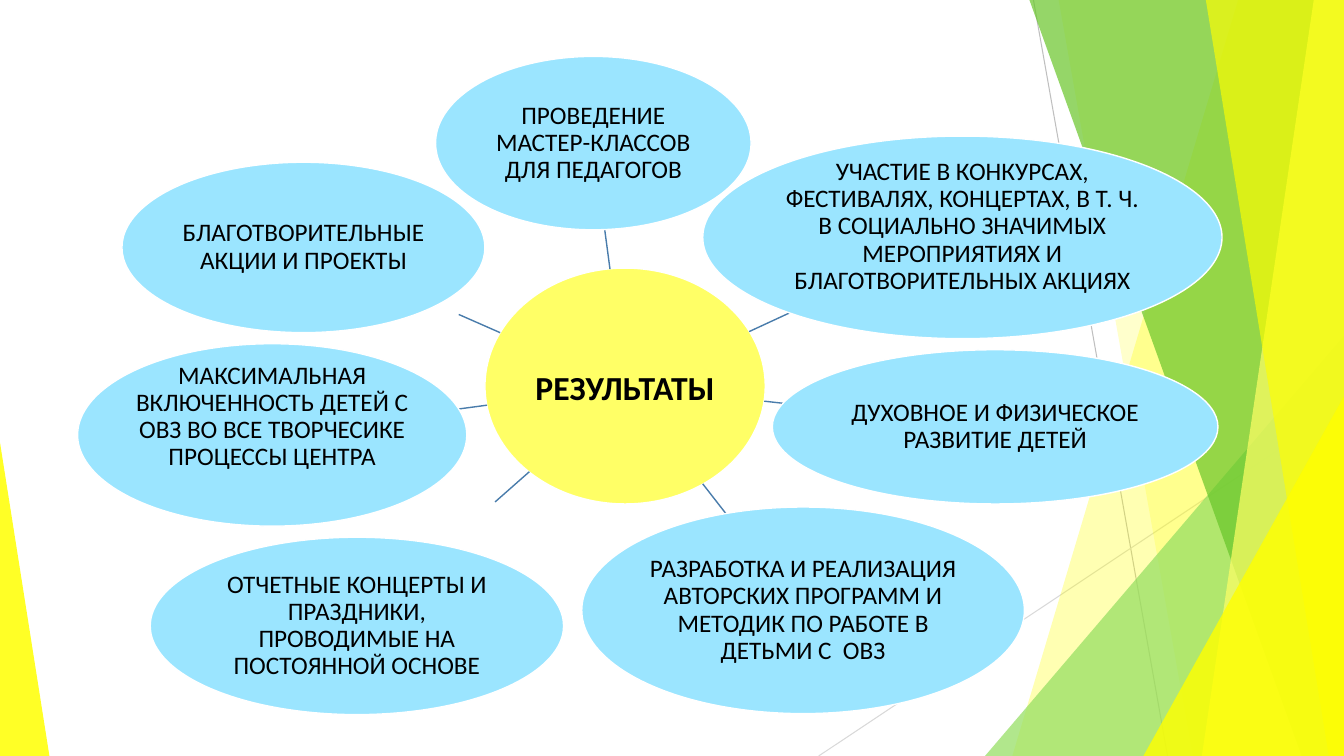
"""Builds a slide with seven results arranged around a centre."""
from dataclasses import dataclass

from lxml import etree
from pptx import Presentation
from pptx import util as u
from pptx.dml import color as dml
from pptx.enum import shapes, text
from pptx.oxml import ns
from pptx.shapes.autoshape import Shape
from pptx.slide import Slide

PX = 9144
WIDE, HIGH = 1333, 750
FONT = "Calibri"
BLUE, LEMON = "9BE5FF", "FFFF66"


@dataclass(frozen=True)
class Line:
    x1: int
    y1: int
    x2: int
    y2: int
    tint: str
    size: float


@dataclass(frozen=True)
class Facet:
    points: tuple[tuple[int, int], ...]
    tint: str
    alpha: int


@dataclass(frozen=True)
class Wedge:
    x: int
    y: int
    w: int
    h: int
    apex: int
    tint: str
    alpha: int


@dataclass(frozen=True)
class Oval:
    x: int
    y: int
    w: int
    h: int
    label: str
    fill: str = BLUE
    size: int = 18
    bold: bool = False
    top: int = 1
    base: int = 1


@dataclass(frozen=True)
class Petal:
    spoke: tuple[int, int, int, int]
    oval: Oval


RAYS = (
    Line(1025, 0, 1158, HIGH, "BFBFBF", 0.75),
    Line(WIDE, 403, 812, HIGH, "D9D9D9", 0.75),
)


def band(top: int, base: int, tint: str, alpha: int) -> Facet:
    return Facet(((top, 0), (WIDE, 0), (WIDE, HIGH), (base, HIGH)), tint, alpha)


DECOR = (
    band(1228, 1004, "FFFF00", 30),
    band(1050, 1183, "FFFF00", 20),
    Wedge(977, 333, 356, 417, 1, "93DE61", 72),
    band(1021, 1291, "68C629", 70),
    band(1303, 1192, "FFFF66", 70),
    band(1196, 1318, "FFFF00", 65),
    Wedge(1134, 393, 199, 357, 1, "FFFF00", 80),
    Wedge(0, 439, 49, 311, 0, "FFFF00", 85),
)

HUB = Oval(481, 266, 278, 234, "РЕЗУЛЬТАТЫ", LEMON, 24, True, top=9)

PETALS = (
    Petal((483, 402, 438, 408), Oval(
        77, 341, 386, 181,
        "МАКСИМАЛЬНАЯ ВКЛЮЧЕННОСТЬ ДЕТЕЙ С ОВЗ ВО ВСЕ ТВОРЧЕСИКЕ "
        "ПРОЦЕССЫ ЦЕНТРА", base=37)),
    Petal((743, 329, 784, 310), Oval(
        697, 135, 515, 201,
        "УЧАСТИЕ В КОНКУРСАХ, ФЕСТИВАЛЯХ, КОНЦЕРТАХ, В Т. Ч. В СОЦИАЛЬНО "
        "ЗНАЧИМЫХ МЕРОПРИЯТИЯХ И БЛАГОТВОРИТЕЛЬНЫХ АКЦИЯХ", base=22)),
    Petal((758, 398, 803, 403), Oval(
        766, 347, 442, 153, "ДУХОВНОЕ И ФИЗИЧЕСКОЕ РАЗВИТИЕ ДЕТЕЙ")),
    Petal((697, 480, 725, 516), Oval(
        577, 503, 439, 205,
        "РАЗРАБОТКА И РЕАЛИЗАЦИЯ АВТОРСКИХ ПРОГРАММ И МЕТОДИК ПО РАБОТЕ "
        "В ДЕТЬМИ С  ОВЗ")),
    Petal((525, 468, 491, 498), Oval(
        149, 533, 410, 176,
        "ОТЧЕТНЫЕ КОНЦЕРТЫ И ПРАЗДНИКИ, ПРОВОДИМЫЕ НА ПОСТОЯННОЙ ОСНОВЕ")),
    Petal((605, 267, 599, 222), Oval(
        432, 56, 313, 172, "ПРОВЕДЕНИЕ МАСТЕР-КЛАССОВ ДЛЯ ПЕДАГОГОВ")),
    Petal((496, 330, 455, 312), Oval(
        121, 161, 360, 169, "БЛАГОТВОРИТЕЛЬНЫЕ АКЦИИ И ПРОЕКТЫ")),
)


def px(size: int) -> u.Emu:
    return u.Emu(size * PX)


def rgb(tint: str) -> dml.RGBColor:
    return dml.RGBColor.from_string(tint)


def paint(shape: Shape, tint: str) -> None:
    shape.shadow.inherit = False
    shape.fill.solid()
    shape.fill.fore_color.rgb = rgb(tint)


def draw_line(slide: Slide, line: Line) -> None:
    link = slide.shapes.add_connector(
        shapes.MSO_CONNECTOR.STRAIGHT,
        px(line.x1), px(line.y1), px(line.x2), px(line.y2))
    link.line.color.rgb = rgb(line.tint)
    link.line.width = u.Pt(line.size)
    etree.SubElement(link.element.spPr, ns.qn("a:effectLst"))


def draw_decor(slide: Slide, part: Facet | Wedge) -> None:
    if isinstance(part, Facet):
        first, *rest = part.points
        path = slide.shapes.build_freeform(*first, scale=PX)
        path.add_line_segments(rest, close=True)
        shape = path.convert_to_shape()
    else:
        shape = slide.shapes.add_shape(
            shapes.MSO_SHAPE.ISOSCELES_TRIANGLE,
            px(part.x), px(part.y), px(part.w), px(part.h))
        shape.adjustments[0] = part.apex
    paint(shape, part.tint)
    shape.line.fill.background()
    tone = shape.element.spPr.find(ns.qn("a:solidFill"))[0]
    etree.SubElement(tone, ns.qn("a:alpha"), val=str(part.alpha * 1000))


def draw_oval(slide: Slide, oval: Oval) -> None:
    shape = slide.shapes.add_shape(
        shapes.MSO_SHAPE.OVAL,
        px(oval.x), px(oval.y), px(oval.w), px(oval.h))
    paint(shape, oval.fill)
    shape.line.color.rgb = rgb("FFFFFF")
    shape.line.width = u.Pt(1)
    frame = shape.text_frame
    frame.text = oval.label
    frame.word_wrap = True
    frame.vertical_anchor = text.MSO_ANCHOR.MIDDLE
    frame.margin_left = frame.margin_right = px(1)
    frame.margin_top, frame.margin_bottom = px(oval.top), px(oval.base)
    para = frame.paragraphs[0]
    para.alignment = text.PP_ALIGN.CENTER
    para.line_spacing = 0.9
    font = para.runs[0].font
    font.name, font.size, font.bold = FONT, u.Pt(oval.size), oval.bold
    font.color.rgb = rgb("000000")


def main() -> None:
    deck = Presentation()
    deck.slide_width, deck.slide_height = px(WIDE), px(HIGH)
    slide = deck.slides.add_slide(deck.slide_layouts[6])
    for ray in RAYS:
        draw_line(slide, ray)
    for part in DECOR:
        draw_decor(slide, part)
    draw_oval(slide, HUB)
    for petal in PETALS:
        draw_line(slide, Line(*petal.spoke, "497CAB", 1))
        draw_oval(slide, petal.oval)
    deck.save("out.pptx")


if __name__ == "__main__":
    main()
